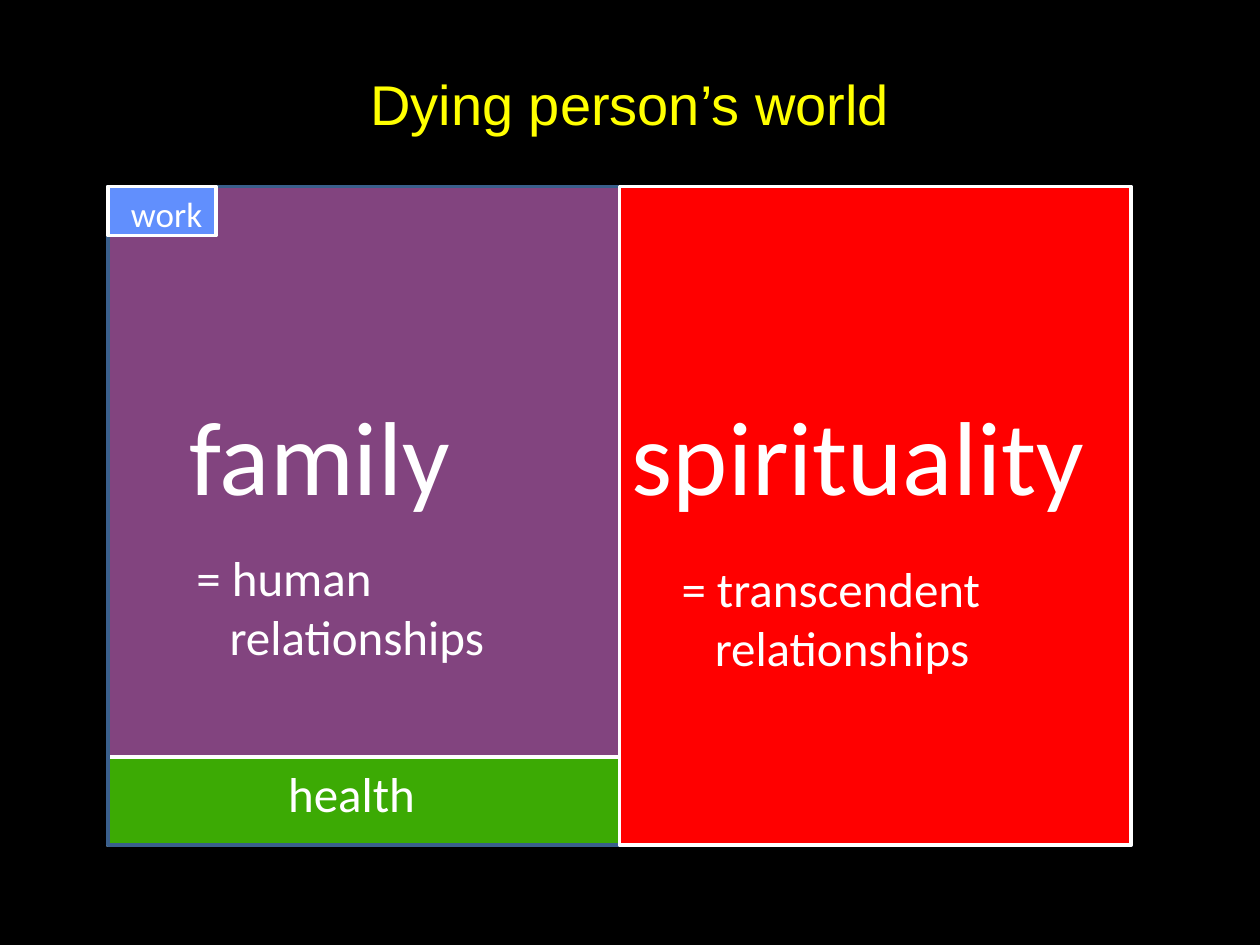
"""Build the slide that maps a dying person's world as coloured areas."""
from dataclasses import dataclass
from typing import Any, Optional

from pptx import Presentation
from pptx.dml.color import RGBColor
from pptx.enum.shapes import MSO_SHAPE
from pptx.enum.text import MSO_ANCHOR, PP_ALIGN
from pptx.util import Cm, Pt

RECT = MSO_SHAPE.RECTANGLE
MIDDLE = MSO_ANCHOR.MIDDLE
CENTER = PP_ALIGN.CENTER
TITLE_ONLY = 5

COLORS = {
    "background": "000000",
    "title": "FFFF00",
    "text": "FFFFFF",
    "frame": "3A5F8C",
    "family": "82447F",
    "health": "3CAA04",
    "work": "618FFD",
    "spirituality": "FF0000",
}
LEFT, TOP = 2.18, 3.76
HALF, HEIGHT = 10.31, 13.28
HEALTH_HEIGHT = 1.78
FAMILY_HEIGHT = HEIGHT - HEALTH_HEIGHT
MIDDLE_X, HEALTH_Y = LEFT + HALF, TOP + FAMILY_HEIGHT
WORD_Y = 7.75
INDENT = 0.67


@dataclass
class Area:
    left: float
    top: float
    width: float
    height: float
    fill: Optional[str]
    line: str = "text"


@dataclass
class Label:
    left: float
    top: float
    width: float
    height: float
    size: int
    lines: tuple[str, ...]


AREAS = [
    Area(LEFT, TOP, HALF, FAMILY_HEIGHT, "family"),
    Area(LEFT, HEALTH_Y, HALF, HEALTH_HEIGHT, "health"),
    Area(LEFT, TOP, 2 * HALF, HEIGHT, None, "frame"),
    Area(LEFT, TOP, 2.18, 0.99, "work"),
    Area(MIDDLE_X, TOP, HALF, HEIGHT, "spirituality"),
]
LABELS = [
    Label(2.39, TOP, 2.39, 1.12, 20, ("work",)),
    Label(5.56, HEALTH_Y, 3.38, 1.45, 28, ("health",)),
    Label(3.58, WORD_Y, 7.34, 2.82, 60, ("family",)),
    Label(MIDDLE_X, WORD_Y, 10.11, 2.82, 60, ("spirituality",)),
    Label(3.71, 10.92, 7.01, 2.64, 28, ("= human", "relationships")),
    Label(13.49, 11.13, 7.39, 2.64, 28, ("= transcendent", "relationships")),
]


def rgb(name: str) -> RGBColor:
    """Return a named colour."""
    return RGBColor.from_string(COLORS[name])


def add_run(p: Any, text: str, color: str, **font: Any) -> None:
    """Add a run with the given font values."""
    r = p.add_run()
    r.text = text
    r.font.color.rgb = rgb(color)
    for name, value in font.items():
        setattr(r.font, name, value)


def add_area(s: Any, area: Area) -> None:
    """Draw one rectangle of the map."""
    box = map(Cm, (area.left, area.top, area.width, area.height))
    sp = s.shapes.add_shape(RECT, *box)
    sp.shadow.inherit = False
    if area.fill:
        sp.fill.solid()
        sp.fill.fore_color.rgb = rgb(area.fill)
    else:
        sp.fill.background()
    sp.line.color.rgb = rgb(area.line)
    sp.line.width = Pt(2)


def add_label(s: Any, label: Label) -> None:
    """Write one label, indenting the lines after its first."""
    box = map(Cm, (label.left, label.top, label.width, label.height))
    tf = s.shapes.add_textbox(*box).text_frame
    tf.word_wrap = True
    for i, text in enumerate(label.lines):
        p = tf.add_paragraph() if i else tf.paragraphs[0]
        if i:
            p._p.get_or_add_pPr().set("marL", str(Cm(INDENT)))
        add_run(p, text, "text", name="Calibri", size=Pt(label.size))


def add_title(s: Any, text: str) -> None:
    """Place and format the slide title."""
    sp = s.shapes.title
    place = {"left": 1.27, "top": 0.76, "width": 22.86, "height": 2.62}
    for name, value in place.items():
        setattr(sp, name, Cm(value))
    tf = sp.text_frame
    tf.vertical_anchor = MIDDLE
    p = tf.paragraphs[0]
    p.alignment = CENTER
    add_run(p, text, "title", name="Arial", size=Pt(32))


def main() -> None:
    """Build and save the presentation."""
    prs = Presentation()
    prs.slide_width, prs.slide_height = Cm(25.4), Cm(19.05)
    s = prs.slides.add_slide(prs.slide_layouts[TITLE_ONLY])
    s.background.fill.solid()
    s.background.fill.fore_color.rgb = rgb("background")
    add_title(s, "Dying person’s world")
    for area in AREAS:
        add_area(s, area)
    for label in LABELS:
        add_label(s, label)
    prs.save("out.pptx")


if __name__ == "__main__":
    main()
